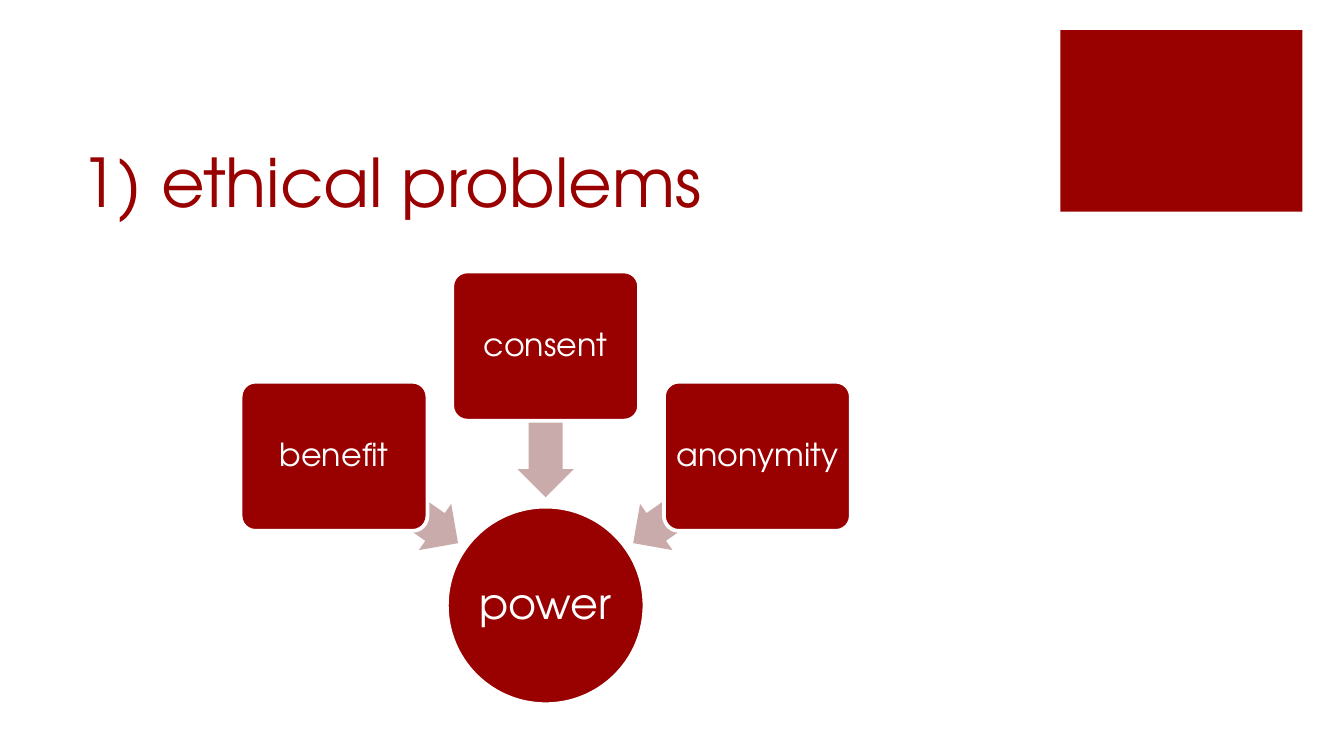
from dataclasses import dataclass
from pptx import Presentation
from pptx.dml.color import RGBColor
from pptx.enum.shapes import MSO_SHAPE as Kind
from pptx.enum.text import MSO_ANCHOR as Anchor, PP_ALIGN as Align
from pptx.util import Inches, Pt


@dataclass(frozen=True)
class Theme:
    """Colours, font and type sizes of the slide."""
    red: RGBColor = RGBColor(0x99, 0x00, 0x00)
    pale: RGBColor = RGBColor(0xCA, 0xAB, 0xAB)
    white: RGBColor = RGBColor(0xFF, 0xFF, 0xFF)
    font: str = "TeX Gyre Adventor"
    title: int = 36
    hub: int = 23
    label: int = 17


THEME = Theme()


def style(frame, text, size, color):
    """Write one line of text and set its font."""
    frame.text = text
    font = frame.paragraphs[0].runs[0].font
    font.name, font.size, font.color.rgb = THEME.font, Pt(size), color


def add_shape(slide, kind, mid, size, fill, edge=None):
    """Add a filled shape centred on a point."""
    (x, y), (w, h) = mid, size
    shape = slide.shapes.add_shape(
        kind, Inches(x - w / 2), Inches(y - h / 2), Inches(w), Inches(h))
    shape.shadow.inherit = False
    shape.fill.solid()
    shape.fill.fore_color.rgb = fill
    if edge is None:
        shape.line.fill.background()
    else:
        shape.line.color.rgb = edge
        shape.line.width = Pt(2)
    return shape


def add_node(slide, kind, mid, size, text, points, inset):
    """Add a red node with a centred white label."""
    node = add_shape(slide, kind, mid, size, THEME.red, THEME.white)
    frame = node.text_frame
    frame.margin_left = frame.margin_right = Inches(inset)
    frame.margin_top = frame.margin_bottom = Inches(inset)
    frame.vertical_anchor = Anchor.MIDDLE
    style(frame, text, points, THEME.white)
    para = frame.paragraphs[0]
    para.alignment, para.line_spacing = Align.CENTER, 0.9
    return node


def add_title(slide, box, text):
    """Add the heading, resting on the bottom of its box."""
    frame = slide.shapes.add_textbox(*map(Inches, box)).text_frame
    frame.word_wrap = True
    frame.vertical_anchor = Anchor.BOTTOM
    style(frame, text, THEME.title, THEME.red)


def add_radial(slide, box, hub, labels):
    """Add a hub with three nodes pointing at it."""
    left, top, width, height = box
    mid, disc, card = left + width / 2, 1.47, (1.39, 1.11)
    step = (width - card[0]) / 2
    disk = add_node(slide, Kind.OVAL, (mid, top + height - disc / 2),
                    (disc, disc), hub, THEME.hub, 0.02)
    disk.text_frame.word_wrap = False
    for side, label in zip((-1, 0, 1), labels):
        drop = abs(side)
        arrow = add_shape(slide, Kind.LEFT_ARROW,
                          (mid + side * 1.11, top + 1.12 + drop * 0.58),
                          (1.12, 0.42), THEME.pale)
        arrow.adjustments[0], arrow.adjustments[1] = 0.6, 0.5
        arrow.rotation = 270 + side * 55
        node = add_node(slide, Kind.ROUNDED_RECTANGLE,
                        (mid + side * step, top + card[1] / 2 + drop * 0.82),
                        card, label, THEME.label, 0.04)
        node.adjustments[0] = 0.1


def main():
    """Build the slide and save it."""
    deck = Presentation()
    deck.slide_width = Inches(10)
    deck.slide_height = deck.slide_width * 9 // 16
    slide = deck.slides.add_slide(deck.slide_layouts[6])
    add_shape(slide, Kind.RECTANGLE, (8.79, 0.9), (1.8, 1.35), THEME.red)
    add_title(slide, (0.5, 0.75, 7.12, 0.94), "1) ethical problems")
    add_radial(slide, (1.79, 2.02, 4.54, 3.22), "power",
               ("benefit", "consent", "anonymity"))
    deck.save("out.pptx")


if __name__ == "__main__":
    main()
